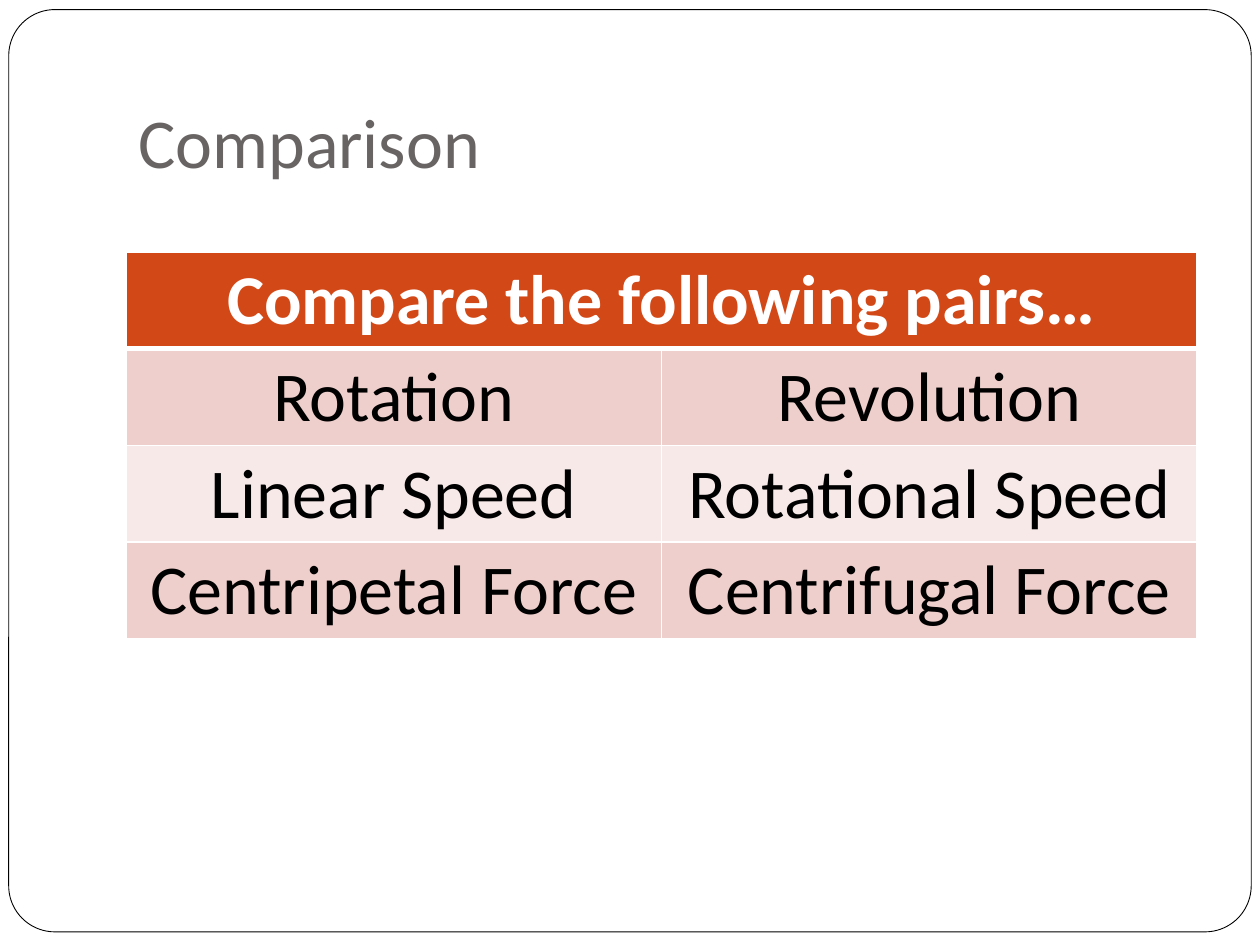
"""Build the comparison slide with its table of paired terms."""
import dataclasses

import lxml.etree
import pptx
import pptx.dml.color
import pptx.enum.shapes
import pptx.enum.text
import pptx.oxml.ns
import pptx.util

Pt = pptx.util.Pt


@dataclasses.dataclass(frozen=True)
class Theme:
    """Colours, font and type size of the slide."""
    font: str = "Calibri"
    size: float = 40
    paper: str = "FFFFFF"
    ink: str = "000000"
    title: str = "696464"
    header: str = "D34817"
    bands: tuple = ("EFCFCC", "F7E9E8")


class SlideBuilder:
    """Hold the theme and the current slide, and add elements to it."""

    def __init__(self, slide, theme):
        """Keep the slide and theme."""
        self.slide = slide
        self.theme = theme

    def color(self, value):
        """Return a colour object for a hex value."""
        return pptx.dml.color.RGBColor.from_string(value)

    def set_text(self, frame, text, color, bold=False, align=pptx.enum.text.PP_ALIGN.LEFT):
        """Fill a text frame with one formatted paragraph."""
        frame.text = text
        para = frame.paragraphs[0]
        para.alignment = align
        for span in para.runs:
            span.font.name = self.theme.font
            span.font.size = Pt(self.theme.size)
            span.font.bold = bold
            span.font.color.rgb = self.color(color)

    def border(self, cell, widths):
        """Draw the four borders of a cell in the paper colour."""
        properties = cell._tc.get_or_add_tcPr()
        qualify = pptx.oxml.ns.qn
        for side, width in zip("LRTB", widths):
            line = lxml.etree.SubElement(properties, qualify(f"a:ln{side}"), w=str(Pt(width)))
            fill = lxml.etree.SubElement(line, qualify("a:solidFill"))
            lxml.etree.SubElement(fill, qualify("a:srgbClr"), val=self.theme.paper)

    def frame(self, left, top, width, height):
        """Add the rounded outline around the slide."""
        shape = self.slide.shapes.add_shape(
            pptx.enum.shapes.MSO_SHAPE.ROUNDED_RECTANGLE,
            Pt(left), Pt(top), Pt(width), Pt(height))
        shape.adjustments[0] = 0.05
        shape.shadow.inherit = False
        shape.fill.solid()
        shape.fill.fore_color.rgb = self.color(self.theme.paper)
        shape.line.color.rgb = self.color(self.theme.ink)
        shape.line.width = Pt(0.5)

    def title(self, text, left, top, width, height):
        """Add the title, resting on the bottom of its box."""
        box = self.slide.shapes.add_textbox(Pt(left), Pt(top), Pt(width), Pt(height))
        frame = box.text_frame
        frame.word_wrap = True
        frame.vertical_anchor = pptx.enum.text.MSO_ANCHOR.BOTTOM
        frame.margin_bottom = Pt(7.2)
        self.set_text(frame, text, self.theme.title)

    def table(self, heading, pairs, left, top, width, height):
        """Add a banded table under one merged heading."""
        rows = [(heading, ""), *pairs]
        table = self.slide.shapes.add_table(
            len(rows), 2, Pt(left), Pt(top), Pt(width), Pt(height)).table
        table.cell(0, 0).merge(table.cell(0, 1))
        for row, texts in enumerate(rows):
            is_header = row == 0
            background = self.theme.header if is_header else self.theme.bands[(row - 1) % 2]
            for column, text in enumerate(texts):
                cell = table.cell(row, column)
                self.border(cell, (1, 1, 3 if row == 1 else 1, 3 if is_header else 1))
                cell.fill.solid()
                cell.fill.fore_color.rgb = self.color(background)
                if text:
                    self.set_text(cell.text_frame, text,
                                  self.theme.paper if is_header else self.theme.ink,
                                  is_header, pptx.enum.text.PP_ALIGN.CENTER)


def main():
    """Create and save the deck."""
    deck = pptx.Presentation()
    deck.slide_width, deck.slide_height = Pt(720), Pt(540)
    builder = SlideBuilder(deck.slides.add_slide(deck.slide_layouts[6]), Theme())
    builder.frame(5, 5.5, 710, 527)
    builder.title("Comparison", 72, 21.6, 612, 90)
    builder.table("Compare the following pairs…", [
        ("Rotation", "Revolution"),
        ("Linear Speed", "Rotational Speed"),
        ("Centripetal Force", "Centrifugal Force"),
    ], 72, 144, 612, 221)
    deck.save("out.pptx")


if __name__ == "__main__":
    main()
